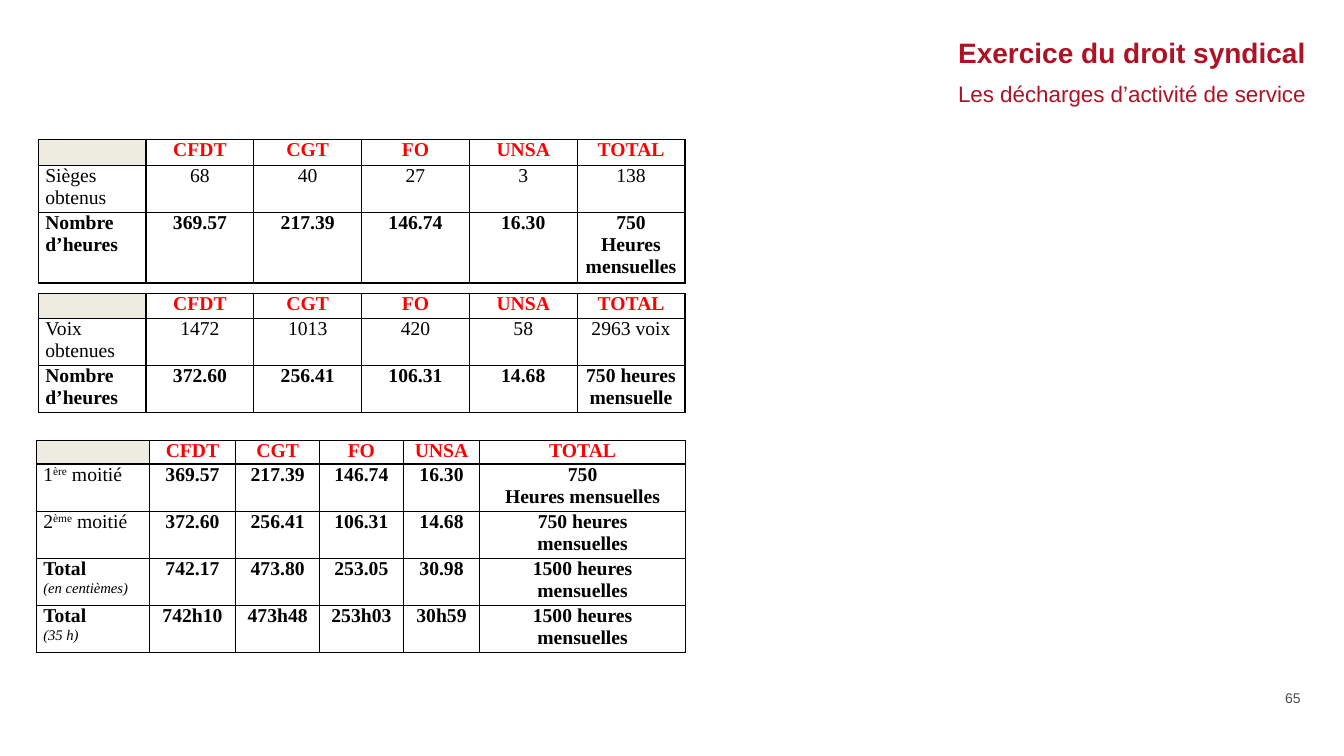
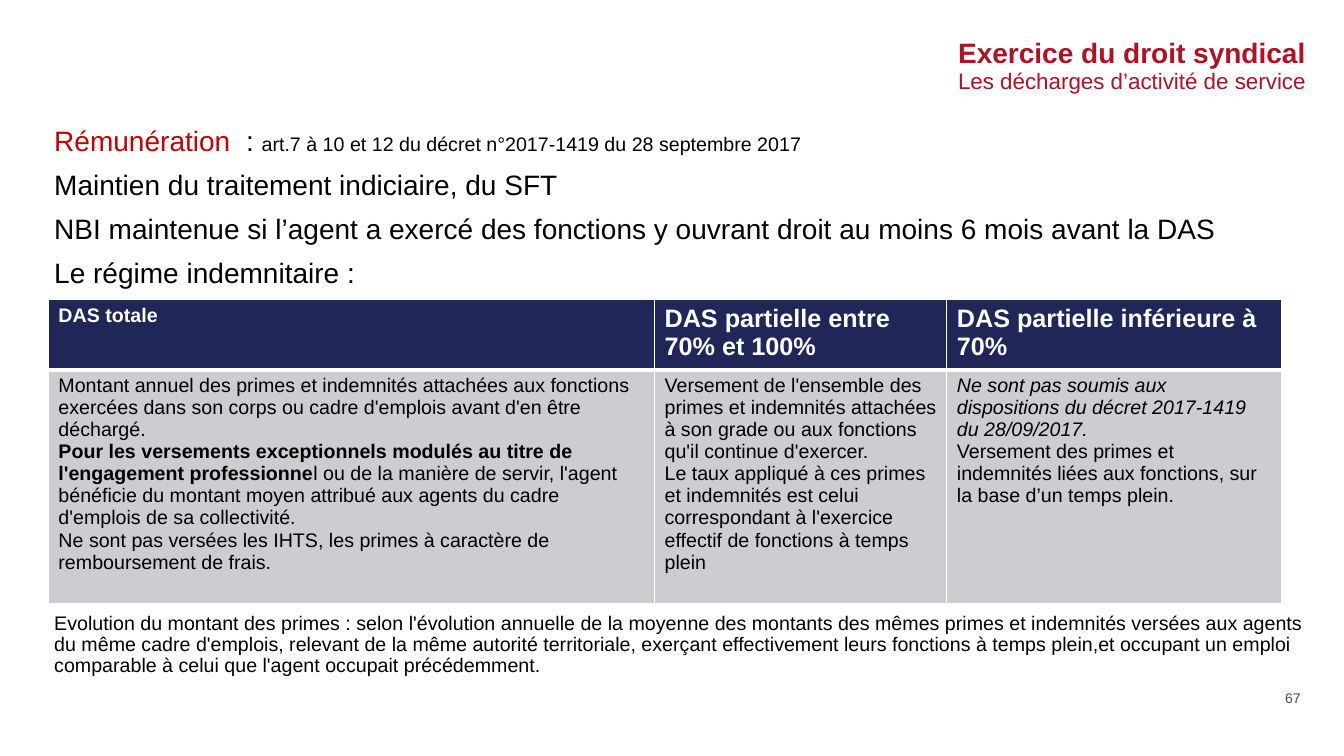
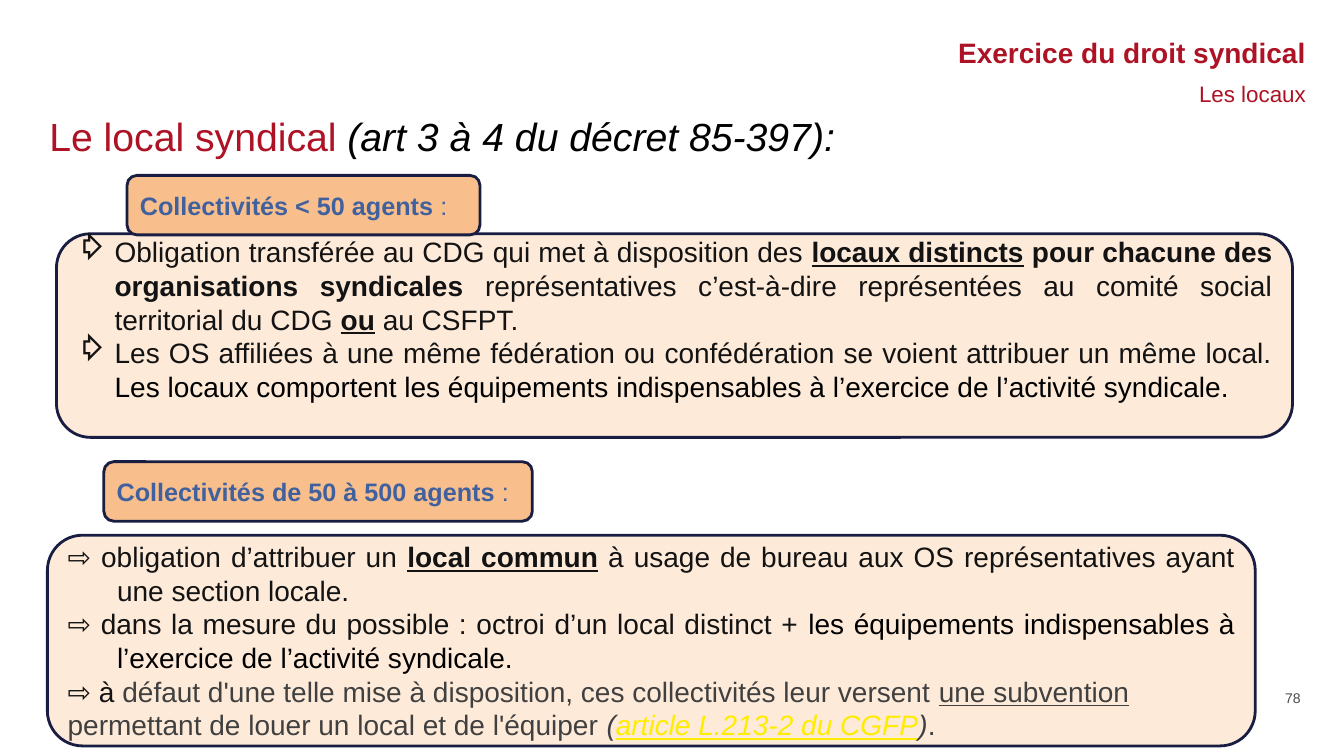
from lxml import etree
from pptx import Presentation, util as u
from pptx.dml.color import RGBColor
from pptx.enum import shapes, text
from pptx.oxml.ns import qn

RED = RGBColor(0xAD, 0x12, 0x25)
DEEP = RGBColor(0xC0, 0x00, 0x00)
VIVID = RGBColor(0xFF, 0x00, 0x00)
BLACK = RGBColor(0x00, 0x00, 0x00)
WHITE = RGBColor(0xFF, 0xFF, 0xFF)
INK = RGBColor(0x13, 0x13, 0x13)
GREY = RGBColor(0x40, 0x40, 0x40)
FOOT = RGBColor(0x4B, 0x4B, 0x4A)
SAND = RGBColor(0xEE, 0xEC, 0xE1)
NAVY = RGBColor(0x20, 0x27, 0x58)
SILVER = RGBColor(0xCD, 0xCD, 0xD1)
EDGE = RGBColor(0x18, 0x1D, 0x41)
PEACH = RGBColor(0xFD, 0xEA, 0xD9)
ORANGE = RGBColor(0xF8, 0xBF, 0x8C)
BLUE = RGBColor(0x40, 0x61, 0x9E)
YELLOW = RGBColor(0xFF, 0xED, 0x00)
LEFT, MID = text.PP_ALIGN.LEFT, text.PP_ALIGN.CENTER
RIGHT, JUST = text.PP_ALIGN.RIGHT, text.PP_ALIGN.JUSTIFY
SERIF = "Times New Roman"

deck = Presentation()
deck.slide_width, deck.slide_height = u.Inches(13.33), u.Inches(7.5)


def at(*parts):
    """Turn percentages of the slide (x, y, width, height) into lengths."""
    sides = (deck.slide_width, deck.slide_height) * 2
    return [round(part * side / 100) for part, side in zip(parts, sides)]


def write(frame, paras, align=LEFT, line=None, before=0, hang=0, mark=None,
          anchor=text.MSO_ANCHOR.TOP, **base):
    """Fill a frame; a paragraph is a string or a list of (text, format)."""
    frame.word_wrap = True
    frame.vertical_anchor = anchor
    for n, runs in enumerate([paras] if isinstance(paras, str) else paras):
        para = frame.add_paragraph() if n else frame.paragraphs[0]
        para.alignment = align
        if line:
            para.line_spacing = line
        if before and n:
            para.space_before = u.Pt(before)
        if hang:
            props = para._p.get_or_add_pPr()
            props.set("marL", str(u.Inches(hang)))
            props.set("indent", str(-u.Inches(hang)))
            if mark:
                etree.SubElement(props, qn("a:buChar")).set("char", mark)
        if not runs:
            end = etree.SubElement(para._p, qn("a:endParaRPr"))
            end.set("sz", str(base["size"] * 100))
            continue
        for words, own in [(runs, {})] if isinstance(runs, str) else runs:
            look = {"face": "Arial", "bold": False, **base, **own}
            run = para.add_run()
            run.text = words
            font = run.font
            font.name, font.size = look["face"], u.Pt(look["size"])
            font.color.rgb, font.bold = look["color"], look["bold"]
            font.italic = look.get("italic", False)
            font.underline = look.get("under", False)
            if "raised" in look:
                run._r.get_or_add_rPr().set("baseline", "30000")


# Slides with their shared heading and page number
DAS = "Les décharges d’activité de service"
pages = []
for sub, top, num in [(DAS, 10.13, "65"), (DAS, 8.4, "67"),
                      ("Les locaux", 10.13, "78")]:
    page = deck.slides.add_slide(deck.slide_layouts[6])
    pages.append(page)
    for words, spot, look in [
        (sub, (6.9, top, 91, 4.93),
         dict(size=16, color=RED, line=0.9, anchor=text.MSO_ANCHOR.MIDDLE)),
        ("Exercice du droit syndical", (6.9, 4.53, 91, 4.53),
         dict(size=20, color=RED, bold=True, line=0.9)),
        (num, (76.8, 90.5, 20.7, 4.13), dict(size=10, color=FOOT)),
    ]:
        box = page.shapes.add_textbox(*at(*spot))
        write(box.text_frame, words, align=RIGHT, **look)
hours, pay, rooms = pages

# Body texts
B, I, BU = dict(bold=True), dict(italic=True), dict(bold=True, under=True)
for page, spot, paras, look in [
    (pay, (3.3, 16.13, 94.5, 24), [
        [("Rémunération ", dict(color=DEEP)), (" : ", {}),
         ("art.7 à 10 et 12 du décret n°2017-1419 du 28 septembre 2017",
          dict(size=14))],
        "Maintien du traitement indiciaire, du SFT",
        "NBI maintenue si l’agent a exercé des fonctions y ouvrant droit "
        "au moins 6 mois avant la DAS",
        "Le régime indemnitaire :"], dict(size=20)),
    (pay, (3.3, 80.5, 94.5, 10),
     "Evolution du montant des primes : selon l'évolution annuelle de la "
     "moyenne des montants des mêmes primes et indemnités versées aux agents "
     "du même cadre d'emplois, relevant de la même autorité territoriale, "
     "exerçant effectivement leurs fonctions à temps plein,et occupant un "
     "emploi comparable à celui que l'agent occupait précédemment.",
     dict(size=14)),
    (rooms, (2.93, 14.93, 94.5, 8),
     [[("Le local syndical ", dict(color=RED)),
       ("(art 3 à 4 du décret 85-397):", I)]], dict(size=28)),
]:
    box = page.shapes.add_textbox(*at(*spot))
    write(box.text_frame, paras, color=BLACK, line=0.9, before=10, **look)

# Table contents
head = ["", "CFDT", "CGT", "FO", "UNSA", "TOTAL"]
first = ["369.57", "217.39", "146.74", "16.30"]
second = ["372.60", "256.41", "106.31", "14.68"]
total = "1500 heures mensuelles"
small = dict(size=10.5, bold=False, italic=True)
plain = dict(bold=False)
high = dict(bold=False, raised=True)
seats = [
    head,
    ["Sièges obtenus", "68", "40", "27", "3", "138"],
    ["Nombre d’heures", *first, ["750", "Heures mensuelles"]],
]
votes = [
    head,
    ["Voix obtenues", "1472", "1013", "420", "58", "2963 voix"],
    ["Nombre d’heures", *second, ["750 heures", "mensuelle"]],
]
sums = [
    head,
    [[[("1", plain), ("ère", high), (" moitié", plain)]], *first,
     ["750", "Heures mensuelles"]],
    [[[("2", plain), ("ème", high), (" moitié", plain)]], *second,
     ["750 heures", "mensuelles"]],
    [["Total", [("(en centièmes)", small)]],
     "742.17", "473.80", "253.05", "30.98", total],
    [["Total", [("(35 h)", small)]],
     "742h10", "473h48", "253h03", "30h59", total],
]
rates = [
    [[[("DAS totale", dict(size=14))]], "DAS partielle entre 70% et 100%",
     "DAS partielle inférieure à 70%"],
    [["Montant annuel des primes et indemnités attachées aux fonctions "
      "exercées dans son corps ou cadre d'emplois avant d'en être déchargé.",
      [("Pour les versements exceptionnels modulés au titre de "
        "l'engagement professionne", B),
       ("l ou de la manière de servir, l'agent bénéficie du montant moyen "
        "attribué aux agents du cadre d'emplois de sa collectivité.", {})],
      "Ne sont pas versées les IHTS, les primes à caractère de "
      "remboursement de frais."],
     ["Versement de l'ensemble des primes et indemnités attachées à son "
      "grade ou aux fonctions qu'il continue d'exercer.",
      "Le taux appliqué à ces primes et indemnités est celui correspondant "
      "à l'exercice effectif de fonctions à temps plein"],
     [[("Ne sont pas soumis aux dispositions du décret 2017-1419 du "
        "28/09/2017.", I)],
      "Versement des primes et indemnités liées aux fonctions, sur la base "
      "d’un temps plein."]],
]

# Tables: page, corner, column widths, row heights, rows, first bold body row
for page, x, y, cols, rows, data, strong in [
    (hours, 2.85, 18.4, [8.02] * 6, [3.47, 5.73, 8.6], seats, 2),
    (hours, 2.85, 38.8, [8.02] * 6, [3.3, 5.73, 5.73], votes, 2),
    (hours, 2.7, 58.27, [8.4, 6.45, 6.23, 6.23, 5.7, 15.3],
     [2.8] + [5.73] * 4, sums, 1),
    (pay, 3.6, 39.6, [45.1, 21.75, 24.9], [8.67, 30.93], rates, 9),
]:
    grid = page.shapes.add_table(
        len(rows), len(cols), *at(x, y, sum(cols), sum(rows))).table
    grid.first_row = grid.horz_banding = False
    for col, wide in zip(grid.columns, cols):
        col.width = at(wide)[0]
    for row, tall in zip(grid.rows, rows):
        row.height = at(0, tall)[1]
    sober = page is hours
    for r, row in enumerate(data):
        for c, words in enumerate(row):
            cell = grid.cell(r, c)
            # Borders, with a thick rule under the dark header
            for side in "LRTB":
                thick = not sober and (r, side) in [(0, "B"), (1, "T")]
                rule = etree.SubElement(cell._tc.get_or_add_tcPr(),
                                        qn("a:ln" + side))
                rule.set("w", str(u.Pt(3 if thick else 1)))
                paint = etree.SubElement(rule, qn("a:solidFill"))
                tint = etree.SubElement(paint, qn("a:srgbClr"))
                tint.set("val", str(BLACK if sober else WHITE))
            if sober:
                cell.margin_left = cell.margin_right = u.Inches(0.07)
                cell.margin_top = cell.margin_bottom = 0
                fill = None if words else SAND
                look = dict(face=SERIF, size=14,
                            color=BLACK if r else VIVID,
                            bold=r == 0 or r >= strong,
                            align=MID if r == 0 or c else JUST)
            else:
                fill = SILVER if r else NAVY
                look = dict(size=14 if r else 18, bold=r == 0,
                            color=BLACK if r else WHITE)
            if fill:
                cell.fill.solid()
                cell.fill.fore_color.rgb = fill
            else:
                cell.fill.background()
            write(cell.text_frame, [words] if words == "" else words, **look)

# Rounded panels and their labels
small_rule = [
    [("Obligation transférée au CDG qui met à disposition des ", {}),
     ("locaux distincts", BU),
     (" pour chacune des organisations syndicales ", B),
     ("représentatives c’est-à-dire représentées au comité social "
      "territorial du CDG ", {}),
     ("ou", BU), (" au CSFPT.", {})],
    [("Les OS affiliées à une même fédération ou confédération se voient "
      "attribuer un même local.", {}),
     (" Les locaux comportent les équipements indispensables à l’exercice "
      "de l’activité syndicale.", dict(color=BLACK))],
]
large_rule = [
    [("⇨ obligation d’attribuer un ", {}), ("local commun", BU),
     (" à usage de bureau aux OS représentatives ayant une section locale.",
      {})],
    [("⇨ dans la mesure du possible : octroi d’un local distinct + ", {}),
     ("les équipements indispensables à l’exercice de l’activité syndicale.",
      dict(color=BLACK))],
    [("⇨ à ", {}),
     ("défaut d'une telle mise à disposition, ces collectivités leur "
      "versent ", dict(color=GREY)),
     ("une subvention", dict(color=GREY, under=True))],
    [("permettant de louer un local et de l'équiper ", dict(color=GREY)),
     ("(", dict(color=GREY, italic=True)),
     ("article L.213-2 du CGFP",
      dict(color=YELLOW, italic=True, under=True)),
     (")", dict(color=GREY, italic=True)), (".", dict(color=GREY))],
]
panel = dict(size=20, color=INK)
label = dict(size=18, color=BLUE)
for spot, fill, paras, foot, look in [
    ((4.2, 30.93, 91.97, 26.93), PEACH, small_rule, 0.38,
     dict(panel, hang=0.38, mark="⇨")),
    ((9.45, 23.2, 26.26, 7.87), ORANGE,
     [[("Collectivités < 50 agents ", B), (":", {})]], 0.05, label),
    ((3.53, 70.8, 89.87, 27.87), PEACH, large_rule, 0.05,
     dict(panel, hang=0.49)),
    ((7.73, 61.07, 31.88, 7.87), ORANGE,
     [[("Collectivités de 50 à 500 agents ", B), (":", {})]], 0.05, label),
]:
    box = rooms.shapes.add_shape(
        shapes.MSO_SHAPE.ROUNDED_RECTANGLE, *at(*spot))
    box.shadow.inherit = False
    box.fill.solid()
    box.fill.fore_color.rgb = fill
    box.line.color.rgb, box.line.width = EDGE, u.Pt(2)
    box.text_frame.margin_bottom = u.Inches(foot)
    write(box.text_frame, paras, align=JUST,
          anchor=text.MSO_ANCHOR.MIDDLE, **look)

deck.save("out.pptx")
